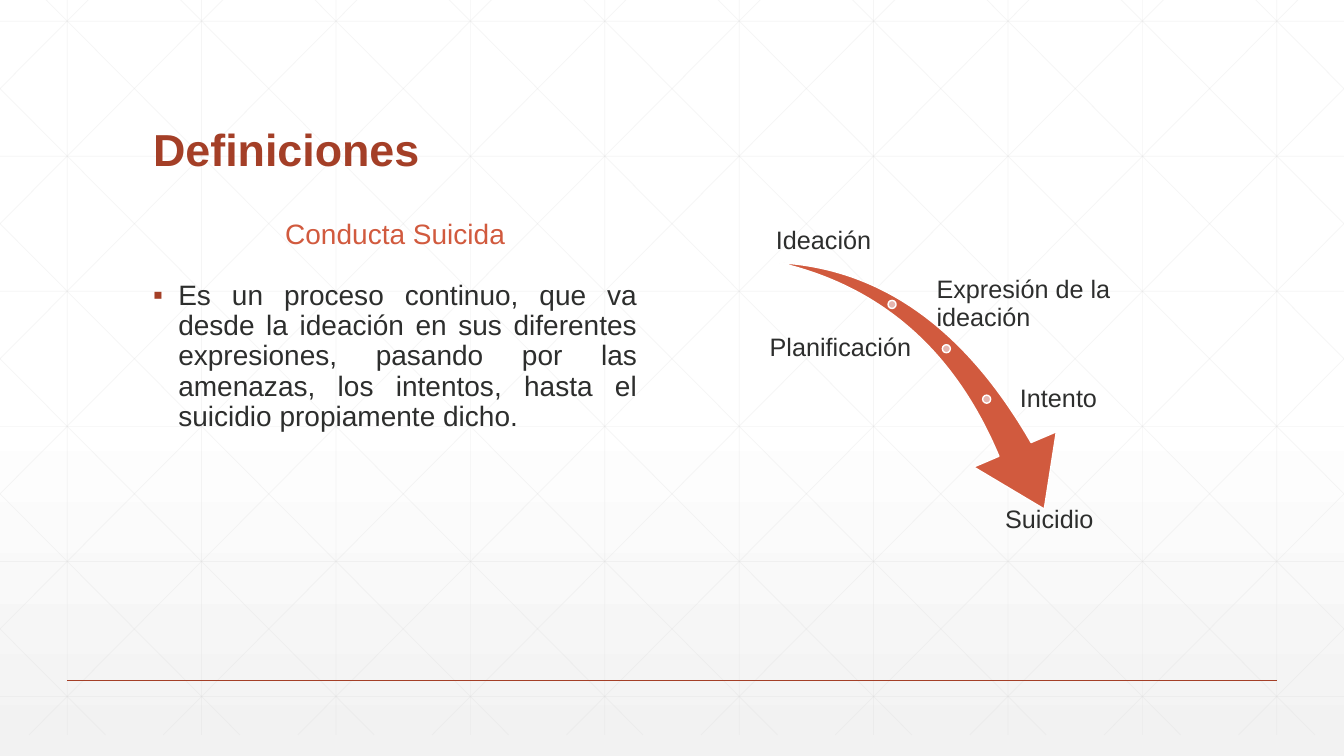
from copy import deepcopy
from dataclasses import dataclass
from typing import NamedTuple

from pptx import Presentation
from pptx import util as u
from pptx.dml.color import RGBColor
from pptx.enum import shapes, text
from pptx.oxml.ns import qn
from pptx.oxml.xmlchemy import OxmlElement


@dataclass(frozen=True)
class Theme:
    font: str = "Arial"
    dark: str = "A43F27"
    accent: str = "D15A3E"
    dot: str = "E5B5AF"
    ink: str = "2D2E2D"
    grid: str = "D9D9D9"
    paper: str = "FFFFFF"
    shade: str = "F2F2F2"
    title: int = 32
    body: int = 20
    label: int = 18


class Box(NamedTuple):
    """A rectangle in inches."""
    left: float
    top: float
    width: float
    height: float

    def area(self, left, top, width, height):
        """Return an inner box given in percent of this one."""
        return Box(self.left + self.width * left / 100,
                   self.top + self.height * top / 100,
                   self.width * width / 100, self.height * height / 100)

    def lengths(self):
        return [u.Inches(value) for value in self]


THEME = Theme()
SLIDE = Box(0, 0, 13.33, 7.5)
ALIGN = text.PP_ALIGN
ANCHOR = text.MSO_ANCHOR
DOT_SIZE = 0.08


def colour(value):
    return RGBColor.from_string(value)


def add_child(parent, tag, **attributes):
    child = OxmlElement(tag)
    for name, value in attributes.items():
        child.set(name, value)
    parent.append(child)
    return child


def add_line(page, start, end, shade, width, opacity=100):
    line = page.shapes.add_connector(
        shapes.MSO_CONNECTOR.STRAIGHT, *[u.Inches(value) for value in (*start, *end)])
    line.line.color.rgb = colour(shade)
    line.line.width = u.Pt(width)
    properties = line._element.spPr
    if opacity < 100:
        for tint in properties.iter(qn("a:srgbClr")):
            add_child(tint, "a:alpha", val=str(opacity * 1000))
    add_child(properties, "a:effectLst")


def add_shape(page, kind, box, fill):
    shape = page.shapes.add_shape(kind, *box.lengths())
    shape.shadow.inherit = False
    shape.fill.solid()
    shape.fill.fore_color.rgb = colour(fill)
    shape.line.color.rgb = colour(THEME.paper)
    shape.line.width = u.Pt(1)
    return shape


def add_text(page, box, words, size, shade, align=ALIGN.LEFT, anchor=ANCHOR.TOP,
             bold=False, inset=None):
    """Place one paragraph in the box and return it."""
    frame = page.shapes.add_textbox(*box.lengths()).text_frame
    frame.word_wrap = True
    frame.vertical_anchor = anchor
    if inset is not None:
        frame.margin_left = frame.margin_right = u.Inches(inset)
        frame.margin_top = frame.margin_bottom = u.Inches(inset)
    para = frame.paragraphs[0]
    para.alignment = align
    para.line_spacing = 0.9
    span = para.add_run()
    span.text = words
    span.font.name = THEME.font
    span.font.size = u.Pt(size)
    span.font.bold = bold
    span.font.color.rgb = colour(shade)
    return para


def add_bullet(para, shade):
    properties = para._p.get_or_add_pPr()
    properties.set("marL", str(u.Inches(0.25)))
    properties.set("indent", str(-u.Inches(0.25)))
    add_child(add_child(properties, "a:buClr"), "a:srgbClr", val=shade)
    add_child(properties, "a:buFont", typeface=THEME.font)
    add_child(properties, "a:buChar", char="▪")


def paint_background(page):
    fill = page.background.fill
    fill.gradient()
    fill.gradient_angle = 270
    first, last = fill.gradient_stops
    first.color.rgb = colour(THEME.paper)
    last.color.rgb = colour(THEME.shade)
    first._gs.addnext(deepcopy(first._gs))
    fill.gradient_stops[1].position = 0.53


def draw_grid(page, box):
    """Draw upright, level and mirrored diagonal lines across the box."""
    def rule(start, end):
        add_line(page, start, end, THEME.grid, 0.5, opacity=25)

    top, bottom, run = -0.21, 7.29, 7.46
    pitch = box.width / 10
    for column in range(10):
        x = pitch * (column + 0.5)
        rule((x, top), (x, bottom))
    for row in range(6):
        y = 0.21 + 1.34 * row
        rule((0, y), (box.width, y))
    for step in range(-5, 10):
        origin = 0.25 + pitch * step
        ends = max(0, origin), min(box.width, origin + run)
        heights = [top + (x - origin) * (bottom - top) / run for x in ends]
        rule(*zip(ends, heights))
        rule(*zip([box.width - x for x in ends], heights))


def draw_footer_rule(page, box):
    rule = box.area(5, 90, 90, 0)
    add_line(page, (rule.left, rule.top), (rule.left + rule.width, rule.top), THEME.dark, 1)


def write_definition(page, box):
    add_text(page, box.area(0, 0, 100, 16.1), "Conducta Suicida", THEME.body,
             THEME.accent, ALIGN.CENTER, ANCHOR.MIDDLE)
    para = add_text(
        page, box.area(0, 17.25, 100, 82.75),
        "Es un proceso continuo, que va desde la ideación en sus diferentes expresiones, "
        "pasando por las amenazas, los intentos, hasta el suicidio propiamente dicho.",
        THEME.body, THEME.ink, ALIGN.JUSTIFY)
    para.space_before = u.Pt(18)
    add_bullet(para, THEME.dark)


def draw_progression(page, box):
    """Draw the falling arrow with its stage dots and labels."""
    arrow = add_shape(page, shapes.MSO_SHAPE.SWOOSH_ARROW,
                      box.area(5.3, 20, 78.3, 60), THEME.accent)
    arrow.adjustments[0], arrow.adjustments[1] = 0.16, 0.31
    arrow.rotation = 73.3
    for across, down in ((35.6, 28.9), (49.2, 41.1), (59.3, 55)):
        centre = box.area(across, down, 0, 0)
        add_shape(page, shapes.MSO_SHAPE.OVAL,
                  Box(centre.left - DOT_SIZE / 2, centre.top - DOT_SIZE / 2,
                      DOT_SIZE, DOT_SIZE), THEME.dot)
    stages = (
        ("Ideación", 0, 0, 36.9, ALIGN.CENTER, ANCHOR.BOTTOM),
        ("Expresión de la ideación", 46, 20.8, 54, ALIGN.LEFT, ANCHOR.MIDDLE),
        ("Planificación ", 0, 33, 42.9, ALIGN.RIGHT, ANCHOR.MIDDLE),
        ("Intento", 66.9, 46.9, 33.1, ALIGN.LEFT, ANCHOR.MIDDLE),
        ("Suicidio", 50, 83.9, 50, ALIGN.CENTER, ANCHOR.TOP),
    )
    for words, left, top, width, align, anchor in stages:
        add_text(page, box.area(left, top, width, 16.1), words, THEME.label,
                 THEME.ink, align, anchor, inset=0.03)


def build_definitions_slide(deck):
    page = deck.slides.add_slide(deck.slide_layouts[6])
    paint_background(page)
    draw_grid(page, SLIDE)
    draw_footer_rule(page, SLIDE)
    add_text(page, SLIDE.area(10.65, 7.33, 78.75, 16.67), "Definiciones", THEME.title,
             THEME.dark, anchor=ANCHOR.BOTTOM, bold=True)
    write_definition(page, SLIDE.area(10.65, 26.53, 37.5, 58))
    draw_progression(page, SLIDE.area(55.8, 26.4, 29.7, 48))


if __name__ == "__main__":
    deck = Presentation()
    deck.slide_width, deck.slide_height = u.Inches(SLIDE.width), u.Inches(SLIDE.height)
    build_definitions_slide(deck)
    deck.save("out.pptx")
